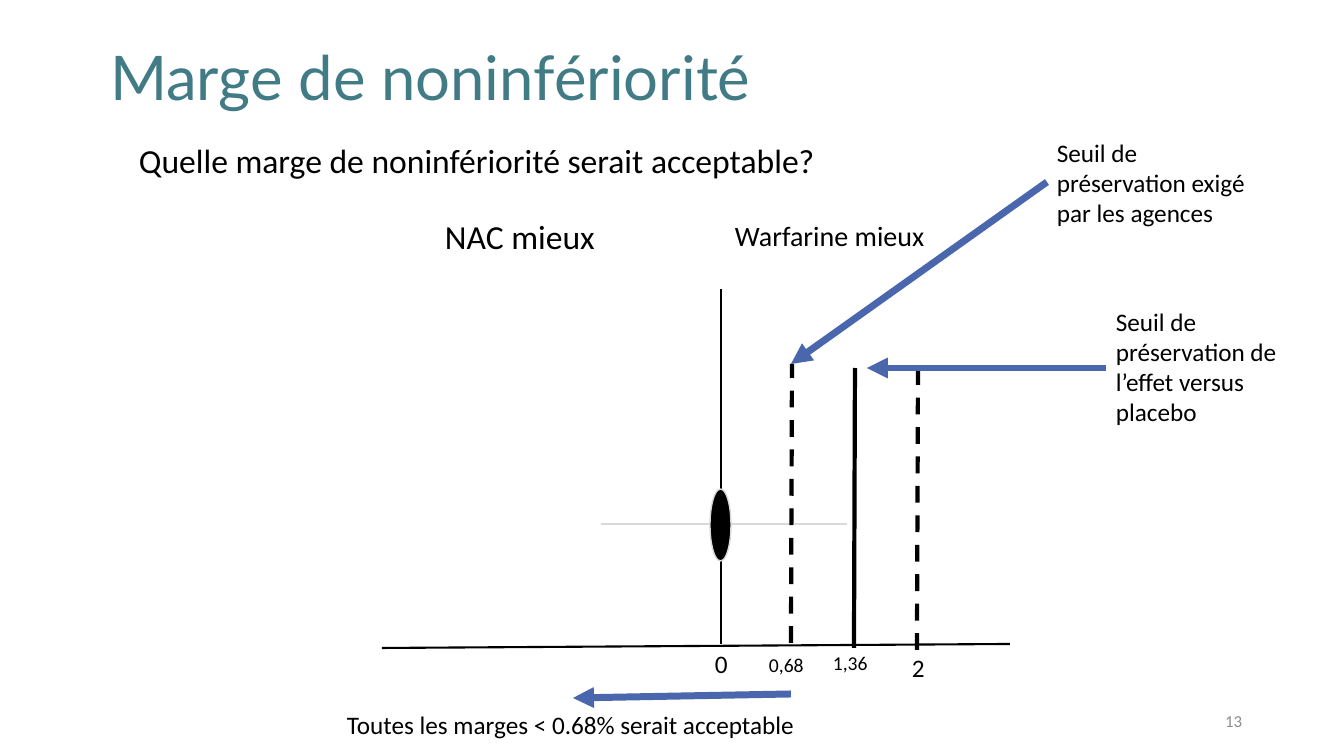
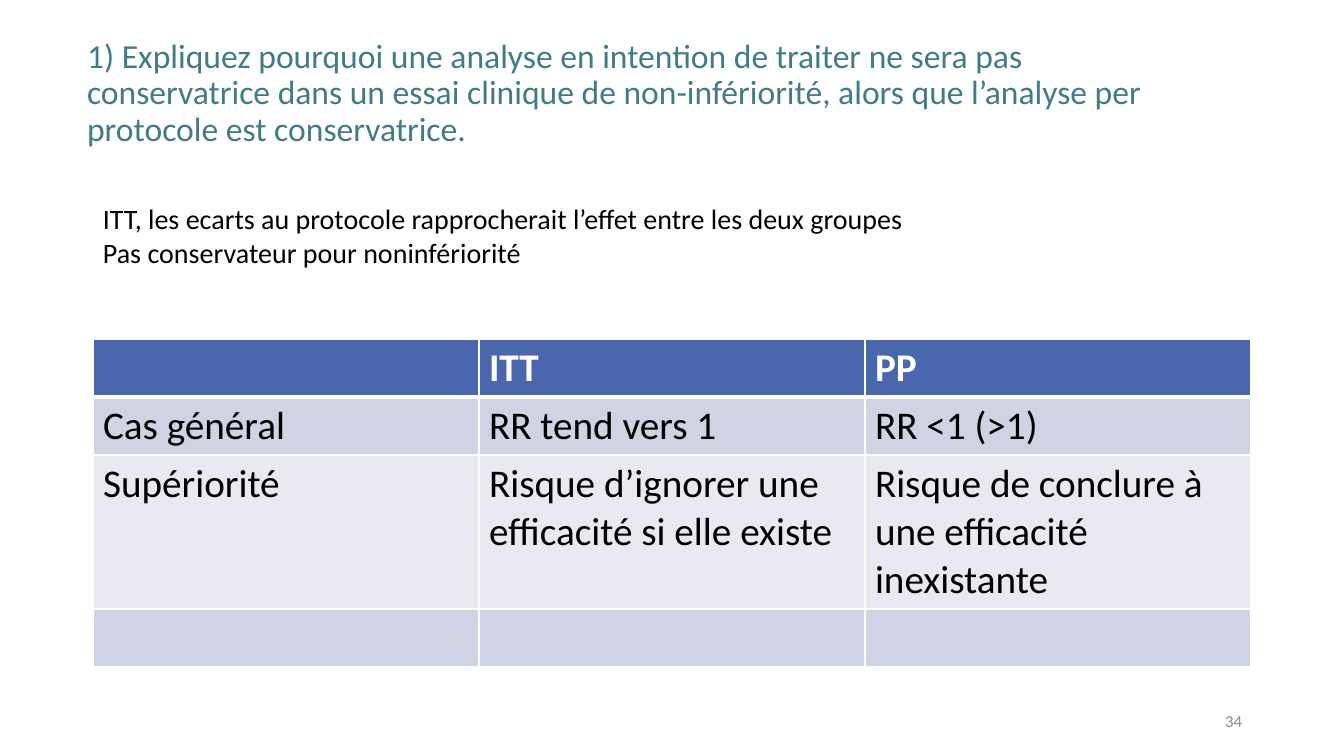
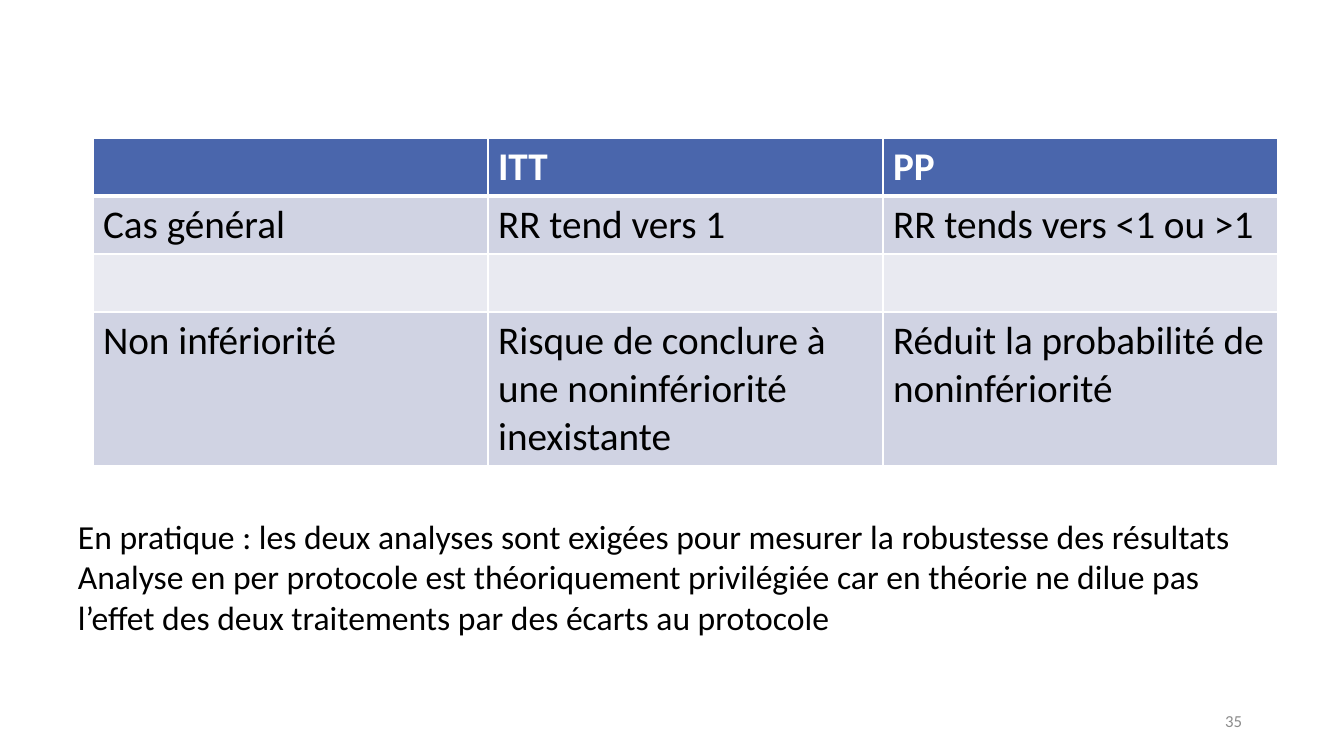
"""Build three slides on the non-inferiority margin and the choice of analysis."""

from dataclasses import dataclass
from typing import Any

from lxml.etree import SubElement
from pptx import Presentation
from pptx.dml.color import RGBColor
from pptx.enum.dml import MSO_LINE
from pptx.enum.shapes import MSO_CONNECTOR, MSO_SHAPE
from pptx.enum.text import MSO_ANCHOR, MSO_AUTO_SIZE, PP_ALIGN
from pptx.oxml.ns import qn
from pptx.slide import Slide
from pptx.util import Emu, Pt

PAGE_WIDTH, PAGE_HEIGHT = 1344, 756
SCALE = 12192000 / PAGE_WIDTH
TITLE_ONLY, BLANK = 5, 6

BLACK = RGBColor(0x00, 0x00, 0x00)
WHITE = RGBColor(0xFF, 0xFF, 0xFF)
TEAL = RGBColor(0x41, 0x7B, 0x85)
BLUE = RGBColor(0x4A, 0x66, 0xAC)
GREY = RGBColor(0x8C, 0x8C, 0x8C)
LIGHT_GREY = RGBColor(0xD9, 0xD9, 0xD9)
BANDS = (RGBColor(0xE9, 0xEA, 0xF1), RGBColor(0xD0, 0xD3, 0xE3))

BODY_FONT, TITLE_FONT = "Calibri", "Lato"
TITLE_WIDTH, TITLE_HEIGHT = 1114, 116
INSET = 5
TABLE_LEFT = 93
ROW_HEIGHT, TALL_ROW_HEIGHT = 58, 154


@dataclass(frozen=True)
class Label:
    """A text box with one paragraph per line of text."""

    text: str
    left: int
    top: int
    width: int
    height: int
    size: int = 18
    wrap: bool = True
    color: RGBColor = BLACK
    align: PP_ALIGN = PP_ALIGN.LEFT
    anchor: MSO_ANCHOR = MSO_ANCHOR.TOP


@dataclass(frozen=True)
class Stroke:
    """A straight line, which may be dashed or end in an arrowhead."""

    start: tuple[int, int]
    end: tuple[int, int]
    width: float = 1.5
    color: RGBColor = BLACK
    dashed: bool = False
    arrow: bool = False


@dataclass(frozen=True)
class Grid:
    """A table with a header row and equal columns."""

    top: int
    column_width: int
    row_heights: tuple[int, ...]
    rows: tuple[tuple[str, ...], ...]


AXES = (
    Stroke((382, 648), (1010, 644)),
    Stroke((721, 644), (721, 289)),
    Stroke((601, 524), (847, 524), color=LIGHT_GREY),
)
THRESHOLDS = (
    Stroke((791, 643), (792, 364), 3, dashed=True),
    Stroke((854, 648), (855, 368), 3),
    Stroke((917, 650), (918, 370), 3, dashed=True),
)
ARROWS = tuple(
    Stroke(start, end, 5, BLUE, arrow=True)
    for start, end in (
        ((1106, 368), (867, 368)),
        ((1047, 182), (791, 364)),
        ((791, 694), (573, 698)),
    )
)
MARGIN_LABELS = (
    Label("Quelle marge de noninfériorité serait acceptable?", 129, 135, 1121, 50, 24),
    Label("NAC mieux", 435, 211, 171, 50, 24, wrap=False),
    Label("Warfarine mieux", 725, 214, 244, 44, 20),
    Label("0", 705, 643, 33, 40, wrap=False),
    Label("0,68", 759, 648, 64, 34, 14),
    Label("1,36", 823, 646, 62, 34, 14),
    Label("2", 902, 647, 31, 40, wrap=False),
    Label("Seuil de préservation exigé par les agences", 1047, 132, 216, 102),
    Label("Seuil de préservation de l’effet versus placebo", 1106, 301, 216, 132),
    Label("Toutes les marges < 0.68% serait acceptable", 337, 704, 473, 40, wrap=False),
)
QUESTION = (
    "1) Expliquez pourquoi une analyse en intention de traiter ne sera pas conservatrice "
    "dans un essai clinique de non-infériorité, alors que l’analyse per protocole est "
    "conservatrice."
)
DEVIATIONS = Label(
    "ITT, les ecarts au protocole rapprocherait l’effet entre les deux groupes\n"
    "Pas conservateur pour noninfériorité",
    93, 197, 829, 78, 20, wrap=False,
)
PRACTICE = Label(
    "En pratique : les deux analyses sont exigées pour mesurer la robustesse des résultats\n"
    "Analyse en per protocole est théoriquement privilégiée car en théorie ne dilue pas "
    "l’effet des deux traitements par des écarts au protocole",
    68, 511, 1184, 132, 24,
)
HEADER = ("", "ITT", "PP")
EMPTY_ROW = ("", "", "")
SUPERIORITY = Grid(
    339, 386, (ROW_HEIGHT, ROW_HEIGHT, TALL_ROW_HEIGHT, ROW_HEIGHT),
    (
        HEADER,
        ("Cas général", "RR tend vers 1", "RR <1 (>1)"),
        (
            "Supériorité",
            "Risque d’ignorer une efficacité si elle existe",
            "Risque de conclure à une efficacité inexistante",
        ),
        EMPTY_ROW,
    ),
)
NONINFERIORITY = Grid(
    138, 395, (ROW_HEIGHT, ROW_HEIGHT, ROW_HEIGHT, TALL_ROW_HEIGHT),
    (
        HEADER,
        ("Cas général", "RR tend vers 1", "RR tends vers <1 ou >1"),
        EMPTY_ROW,
        (
            "Non infériorité",
            "Risque de conclure à une noninfériorité inexistante",
            "Réduit la probabilité de noninfériorité",
        ),
    ),
)


def px(length: float) -> Emu:
    """Turn a length in px into EMU."""
    return Emu(round(length * SCALE))


def set_values(target: Any, values: dict[str, Any]) -> None:
    """Set each named attribute of the target."""
    for name, value in values.items():
        setattr(target, name, value)


def write_text(frame: Any, text: str, size: int, color: RGBColor, font: str = BODY_FONT,
               bold: bool = False, **layout: Any) -> None:
    """Write one formatted paragraph per line of text."""
    for index, line in enumerate(text.split("\n")):
        para = frame.add_paragraph() if index else frame.paragraphs[0]
        set_values(para, layout)
        span = para.add_run()
        span.text = line
        set_values(span.font, {"name": font, "size": Pt(size), "bold": bold})
        span.font.color.rgb = color


def add_label(page: Slide, label: Label) -> None:
    """Draw a text box."""
    bounds = map(px, (label.left, label.top, label.width, label.height))
    frame = page.shapes.add_textbox(*bounds).text_frame
    set_values(frame, {"word_wrap": label.wrap, "vertical_anchor": label.anchor})
    write_text(frame, label.text, label.size, label.color, alignment=label.align)


def add_page_number(page: Slide, number: int) -> None:
    """Draw the number at the lower right."""
    add_label(page, Label(str(number), 950, 701, 302, 40, 12, color=GREY,
                          align=PP_ALIGN.RIGHT, anchor=MSO_ANCHOR.MIDDLE))


def set_title(page: Slide, text: str, left: int, top: int, size: int, font: str,
              bottom_inset: int = INSET) -> None:
    """Place and format the title placeholder."""
    title = page.shapes.title
    set_values(title, {"left": px(left), "top": px(top),
                       "width": px(TITLE_WIDTH), "height": px(TITLE_HEIGHT)})
    set_values(title.text_frame, {
        "word_wrap": True,
        "auto_size": MSO_AUTO_SIZE.NONE,
        "vertical_anchor": MSO_ANCHOR.MIDDLE,
        "margin_bottom": px(bottom_inset),
    })
    write_text(title.text_frame, text, size, TEAL, font,
               alignment=PP_ALIGN.LEFT, line_spacing=0.9)


def add_stroke(page: Slide, stroke: Stroke) -> None:
    """Draw a line or an arrow."""
    ends = map(px, (*stroke.start, *stroke.end))
    connector = page.shapes.add_connector(MSO_CONNECTOR.STRAIGHT, *ends)
    line = connector.line
    line.width = Pt(stroke.width)
    line.color.rgb = stroke.color
    if stroke.dashed:
        line.dash_style = MSO_LINE.DASH
    if stroke.arrow:
        SubElement(line._get_or_add_ln(), qn("a:tailEnd"), type="triangle")
    SubElement(connector._element.spPr, qn("a:effectLst"))


def add_estimate(page: Slide) -> None:
    """Draw the point estimate on its interval."""
    bounds = map(px, (710, 489, 21, 72))
    marker = page.shapes.add_shape(MSO_SHAPE.FLOWCHART_CONNECTOR, *bounds)
    marker.shadow.inherit = False
    marker.fill.solid()
    marker.fill.fore_color.rgb = BLACK
    marker.line.color.rgb = LIGHT_GREY
    marker.line.width = Pt(1)


def add_borders(cell: Any, row: int) -> None:
    """Give a cell white borders, heavier under the header."""
    widths = {"lnL": 1, "lnR": 1, "lnT": 3 if row == 1 else 1, "lnB": 3 if row == 0 else 1}
    properties = cell._tc.get_or_add_tcPr()
    for side, width in widths.items():
        border = SubElement(properties, qn(f"a:{side}"), w=str(Pt(width)))
        fill = SubElement(border, qn("a:solidFill"))
        SubElement(fill, qn("a:srgbClr"), val=str(WHITE))


def add_grid(page: Slide, grid: Grid) -> None:
    """Draw a table with a blue header and two alternating bands."""
    columns = len(HEADER)
    bounds = map(px, (TABLE_LEFT, grid.top, columns * grid.column_width, sum(grid.row_heights)))
    table = page.shapes.add_table(len(grid.rows), columns, *bounds).table
    table.horz_banding = False
    for column in table.columns:
        column.width = px(grid.column_width)
    for row, texts in enumerate(grid.rows):
        table.rows[row].height = px(grid.row_heights[row])
        is_header = row == 0
        for column, text in enumerate(texts):
            cell = table.cell(row, column)
            add_borders(cell, row)
            cell.fill.solid()
            cell.fill.fore_color.rgb = BLUE if is_header else BANDS[row % 2]
            if text:
                write_text(cell.text_frame, text, 28, WHITE if is_header else BLACK,
                           bold=is_header)


def build_margin(page: Slide) -> None:
    """Draw the margin diagram."""
    set_title(page, "Marge de noninfériorité", 100, 23, 44, TITLE_FONT)
    for stroke in AXES:
        add_stroke(page, stroke)
    add_estimate(page)
    for stroke in THRESHOLDS + ARROWS:
        add_stroke(page, stroke)
    for label in MARGIN_LABELS:
        add_label(page, label)
    add_page_number(page, 13)


def build_superiority(page: Slide) -> None:
    """Draw the question and the superiority table."""
    set_title(page, QUESTION, 77, 54, 24, BODY_FONT, bottom_inset=41)
    add_grid(page, SUPERIORITY)
    add_label(page, DEVIATIONS)
    add_page_number(page, 34)


def build_noninferiority(page: Slide) -> None:
    """Draw the non-inferiority table and the practical advice."""
    add_grid(page, NONINFERIORITY)
    add_label(page, PRACTICE)
    add_page_number(page, 35)


def main() -> None:
    """Build and save the deck."""
    deck = Presentation()
    set_values(deck, {"slide_width": px(PAGE_WIDTH), "slide_height": px(PAGE_HEIGHT)})
    for layout, build in ((TITLE_ONLY, build_margin), (TITLE_ONLY, build_superiority),
                          (BLANK, build_noninferiority)):
        build(deck.slides.add_slide(deck.slide_layouts[layout]))
    deck.save("out.pptx")


if __name__ == "__main__":
    main()
